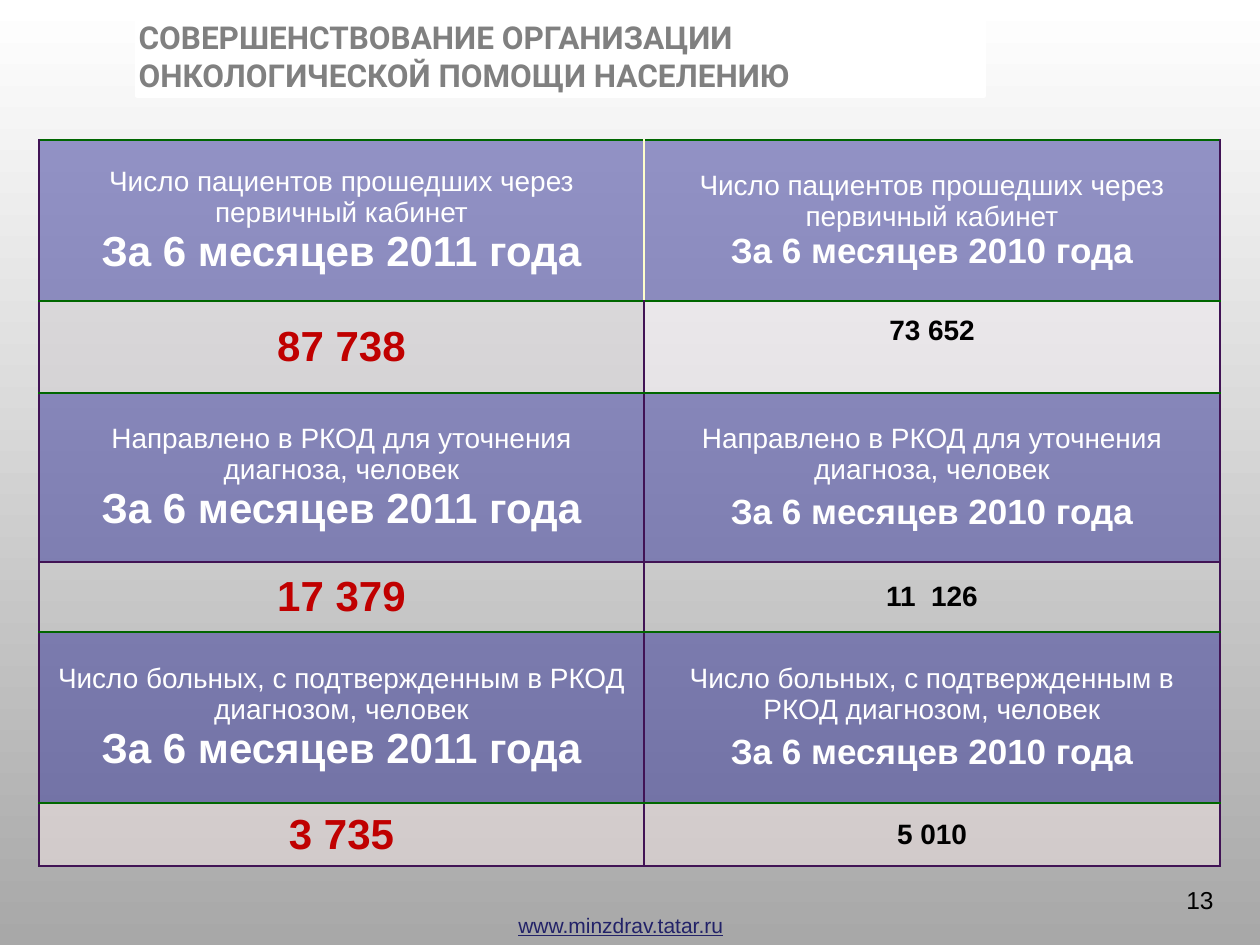
"""Builds the slide comparing cancer care figures for the first halves of 2011 and 2010."""
from lxml.etree import SubElement
from pptx import Presentation
from pptx.dml.color import RGBColor
from pptx.enum.shapes import MSO_SHAPE
from pptx.enum.text import MSO_ANCHOR, MSO_AUTO_SIZE, PP_ALIGN
from pptx.oxml import parse_xml
from pptx.oxml.ns import nsdecls, qn
from pptx.util import Emu, Pt


class Theme:
    font, title_font = "Arial", "Roboto"
    white, black, grey, shade = "FFFFFF", "000000", "808080", "A8A8A8"
    red, link, header = "C00000", "222268", "333399"
    green, purple, cream = "006600", "411355", "FFFFCC"
    title_size, link_size, number_size = 18, 12, 14
    label_size, sizes = 16, (24, 20)
    value_sizes, value_colors = (24, 16), (red, black)


def px(*lengths):
    return [Emu(round(length * 914400 / 126)) for length in lengths]


def style(para, size, color, bold=False, align=PP_ALIGN.LEFT, font=Theme.font):
    para.alignment = align
    for span in para.runs:
        span.font.name = font
        span.font.size = Pt(size)
        span.font.bold = bold
        span.font.color.rgb = RGBColor.from_string(color)


deck = Presentation()
deck.slide_width, deck.slide_height = px(1260, 945)
page = deck.slides.add_slide(deck.slide_layouts[5])

backdrop = page.background.fill
backdrop.gradient()
backdrop.gradient_angle = 270
for stop, color in zip(backdrop.gradient_stops, (Theme.white, Theme.shade)):
    stop.color.rgb = RGBColor.from_string(color)

site = page.shapes.add_textbox(*px(506, 906, 232, 38)).text_frame
site.word_wrap = False
site.text = "www.minzdrav.tatar.ru"
style(site.paragraphs[0], Theme.link_size, Theme.link)
site.paragraphs[0].runs[0].font.underline = True

panel = page.shapes.add_shape(MSO_SHAPE.RECTANGLE, *px(137, 20, 847, 76))
panel.shadow.inherit = False
panel.fill.solid()
panel.fill.fore_color.rgb = RGBColor.from_string(Theme.white)
panel.line.color.rgb = RGBColor.from_string(Theme.white)
panel.line.width = Pt(2)

periods = ("За 6 месяцев 2011 года", "За 6 месяцев 2010 года")
sections = [
    ("Число пациентов прошедших через первичный кабинет",
     ("87 738", "73 652"), ("D1CDD0", "F1EBF1"), 0),
    ("Направлено в РКОД для уточнения диагноза, человек",
     ("17 379", "11  126"), (None, None), 4),
    ("Число больных, с подтвержденным в РКОД диагнозом, человек",
     ("3 735", "5 010"), ("F4E7E7", "F4E7E7"), 4),
]
column_widths = px(605, 576)
row_heights = px(161, 92, 169, 70, 171, 63)
rules = [Theme.green] * 3 + [Theme.purple] + [Theme.green] * 2 + [Theme.purple]

table = page.shapes.add_table(6, 2, *px(39, 140, 1181, 726)).table
table.first_row = table.horz_banding = False
for column, width in zip(table.columns, column_widths):
    column.width = width
for row, height in zip(table.rows, row_heights):
    row.height = height

for r in range(6):
    label, values, tints, gap = sections[r // 2]
    for c in range(2):
        cell = table.cell(r, c)
        cell.vertical_anchor = MSO_ANCHOR.MIDDLE
        frame = cell.text_frame
        if r % 2 == 0:
            tint = Theme.header
            frame.text = f"{label}\n{periods[c]}"
            style(frame.paragraphs[0], Theme.label_size, Theme.white, align=PP_ALIGN.CENTER)
            style(frame.paragraphs[1], Theme.sizes[c], Theme.white, True, PP_ALIGN.CENTER)
            frame.paragraphs[1].space_before = Pt(gap * c)
        else:
            tint = tints[c]
            frame.text = values[c]
            style(frame.paragraphs[0], Theme.value_sizes[c], Theme.value_colors[c], True, PP_ALIGN.CENTER)

        properties = cell._tc.get_or_add_tcPr()
        if tint:
            cell.fill.solid()
            cell.fill.fore_color.rgb = RGBColor.from_string(tint)
            SubElement(properties.find(".//" + qn("a:srgbClr")), qn("a:alpha"), val="50000")
        else:
            cell.fill.background()

        middle = Theme.cream if r == 0 else Theme.purple
        left, right = (Theme.purple, middle) if c == 0 else (middle, Theme.purple)
        borders = {"L": left, "R": right, "T": rules[r], "B": rules[r + 1]}
        for i, (side, color) in enumerate(borders.items()):
            properties.insert(i, parse_xml(
                f'<a:ln{side} {nsdecls("a")} w="12700"><a:solidFill>'
                f'<a:srgbClr val="{color}"/></a:solidFill></a:ln{side}>'))

raised = table.cell(1, 1)
raised.vertical_anchor = MSO_ANCHOR.TOP
raised.margin_top = px(14)[0]

number = page.shapes.add_textbox(*px(1170, 879, 56, 66)).text_frame
number.word_wrap = True
number.text = "13"
style(number.paragraphs[0], Theme.number_size, Theme.black, align=PP_ALIGN.RIGHT)

title = page.shapes.title
title.left, title.top, title.width, title.height = px(126, 11, 901, 90)
heading = title.text_frame
heading.text = "СОВЕРШЕНСТВОВАНИЕ ОРГАНИЗАЦИИ ОНКОЛОГИЧЕСКОЙ ПОМОЩИ НАСЕЛЕНИЮ"
heading.word_wrap = True
heading.auto_size = MSO_AUTO_SIZE.NONE
heading.vertical_anchor = MSO_ANCHOR.MIDDLE
style(heading.paragraphs[0], Theme.title_size, Theme.grey, True, font=Theme.title_font)
title.element.getparent().append(title.element)

deck.save("out.pptx")
